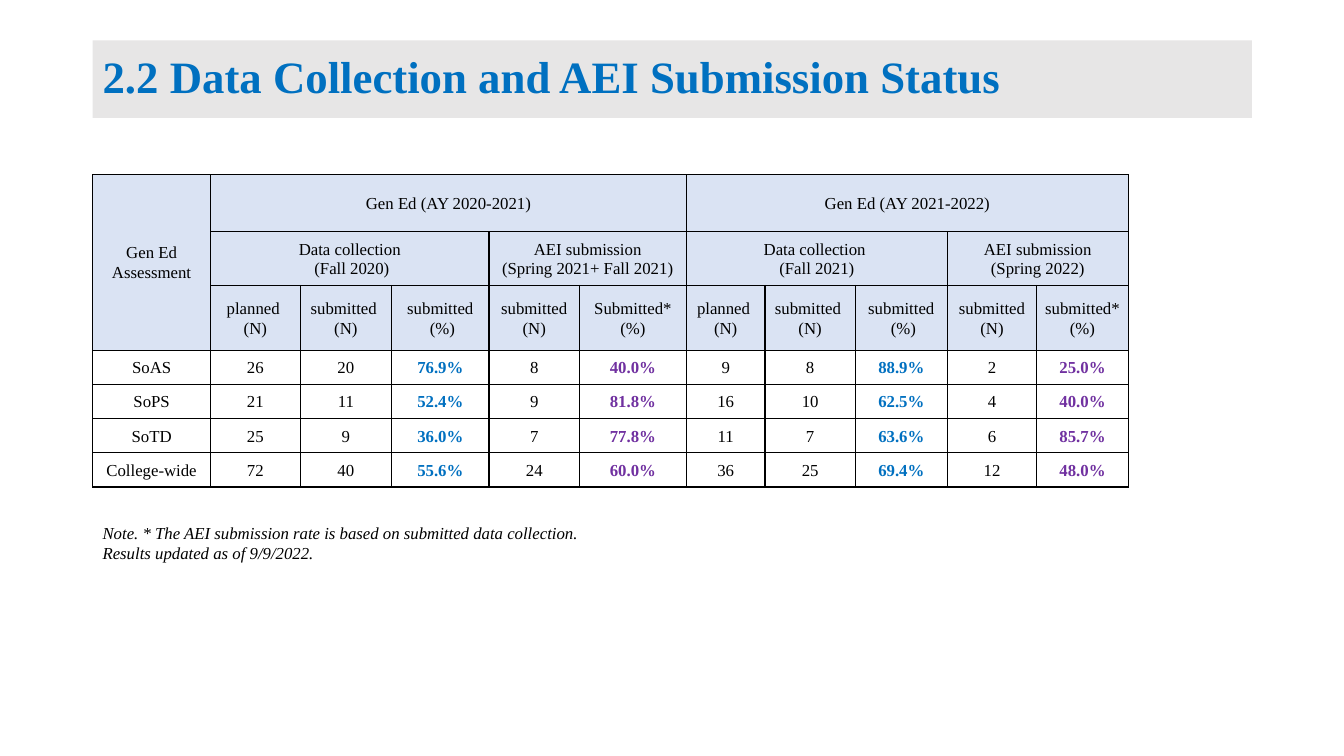
from lxml import etree
from pptx import Presentation
from pptx.dml.color import RGBColor
from pptx.enum.text import MSO_ANCHOR, PP_ALIGN
from pptx.oxml.ns import qn
from pptx.util import Pt

MIDDLE, TOP = MSO_ANCHOR.MIDDLE, MSO_ANCHOR.TOP
LEFT, CENTER = PP_ALIGN.LEFT, PP_ALIGN.CENTER
FONT = "Times New Roman"
BLACK, BLUE, PURPLE = "000000", "0070C0", "7030A0"
TITLE_FILL, HEADER_FILL = "E7E6E6", "DAE3F3"

# Content
TITLE = "2.2 Data Collection and AEI Submission Status"
NOTE = ("Note. * The AEI submission rate is based on submitted data collection.\n"
        "Results updated as of 9/9/2022.")

# Merged header cells: row, column, row span, column span, text
HEADER_GROUPS = [
    (0, 0, 3, 1, "Gen Ed Assessment"),
    (0, 1, 1, 5, "Gen Ed (AY 2020-2021)"),
    (0, 6, 1, 5, "Gen Ed (AY 2021-2022)"),
    (1, 1, 1, 3, "Data collection\n (Fall 2020)"),
    (1, 4, 1, 2, "AEI submission\n(Spring 2021+ Fall 2021)"),
    (1, 6, 1, 3, "Data collection \n(Fall 2021)"),
    (1, 9, 1, 2, "AEI submission\n(Spring 2022)"),
]
YEAR_HEADERS = ["planned \n(N)", "submitted \n(N)", "submitted\n (%)", "submitted\n(N)"]
COLUMN_HEADERS = YEAR_HEADERS + ["Submitted*\n(%)"] + YEAR_HEADERS + ["submitted*\n(%)"]
SCHOOLS = [
    ("SoAS", "26", "20", "76.9%", "8", "40.0%", "9", "8", "88.9%", "2", "25.0%"),
    ("SoPS", "21", "11", "52.4%", "9", "81.8%", "16", "10", "62.5%", "4", "40.0%"),
    ("SoTD", "25", "9", "36.0%", "7", "77.8%", "11", "7", "63.6%", "6", "85.7%"),
    ("College-wide", "72", "40", "55.6%", "24", "60.0%", "36", "25", "69.4%", "12", "48.0%"),
]
RATE_COLORS = {3: BLUE, 8: BLUE, 5: PURPLE, 10: PURPLE}

# Layout in points
MARGIN = 66.2
COLUMN_WIDTHS = [84.3, 63.9, 65.4, 69.6, 64.6, 76.4, 56.1, 64.6, 65.7, 63.9, 65.4]
HEADER_HEIGHTS = [40.8, 38.4, 46.4]
ROW_HEIGHTS = HEADER_HEIGHTS + [24.4] * len(SCHOOLS)


def rgb(color):
    return RGBColor.from_string(color)


def write(frame, text, size=12, color=BLACK, bold=False, italic=False,
          align=LEFT, spacing=1.0):
    frame.word_wrap = True
    for index, line in enumerate(text.split("\n")):
        para = frame.add_paragraph() if index else frame.paragraphs[0]
        para.alignment = align
        para.line_spacing = spacing
        span = para.add_run()
        span.text = line
        font = span.font
        font.name, font.size = FONT, Pt(size)
        font.bold, font.italic = bold, italic
        font.color.rgb = rgb(color)


def add_text(page, text, left, top, width, height, fill=None, anchor=TOP, **style):
    box = page.shapes.add_textbox(Pt(left), Pt(top), Pt(width), Pt(height))
    if fill:
        box.fill.solid()
        box.fill.fore_color.rgb = rgb(fill)
    box.text_frame.vertical_anchor = anchor
    write(box.text_frame, text, **style)


def format_cell(cell, fill=None):
    cell.vertical_anchor = MIDDLE
    cell.margin_left = cell.margin_right = Pt(5)
    cell.margin_top = cell.margin_bottom = 0
    properties = cell._tc.get_or_add_tcPr()
    for side in ("a:lnL", "a:lnR", "a:lnT", "a:lnB"):
        line = etree.SubElement(properties, qn(side), w=str(Pt(1)))
        solid = etree.SubElement(line, qn("a:solidFill"))
        etree.SubElement(solid, qn("a:srgbClr"), val=BLACK)
    if fill:
        cell.fill.solid()
        cell.fill.fore_color.rgb = rgb(fill)
    else:
        cell.fill.background()


def add_status_table(page):
    table = page.shapes.add_table(
        len(ROW_HEIGHTS), len(COLUMN_WIDTHS), Pt(MARGIN), Pt(124.8),
        Pt(sum(COLUMN_WIDTHS)), Pt(sum(ROW_HEIGHTS))).table
    table.first_row = table.horz_banding = False
    for column, width in zip(table.columns, COLUMN_WIDTHS):
        column.width = Pt(width)
    header_count = len(HEADER_HEIGHTS)
    for index, height in enumerate(ROW_HEIGHTS):
        table.rows[index].height = Pt(height)
        for cell in table.rows[index].cells:
            format_cell(cell, HEADER_FILL if index < header_count else None)

    def fill_cell(row, column, text, **style):
        write(table.cell(row, column).text_frame, text,
              align=CENTER, spacing=1.07, **style)

    # Header rows
    for row, column, down, across, text in HEADER_GROUPS:
        table.cell(row, column).merge(table.cell(row + down - 1, column + across - 1))
        fill_cell(row, column, text)
    for column, text in enumerate(COLUMN_HEADERS, 1):
        fill_cell(header_count - 1, column, text)

    # School rows
    for row, values in enumerate(SCHOOLS, header_count):
        for column, text in enumerate(values):
            fill_cell(row, column, text, bold=column in RATE_COLORS,
                      color=RATE_COLORS.get(column, BLACK))


def main():
    deck = Presentation()
    deck.slide_width, deck.slide_height = Pt(960), Pt(540)
    page = deck.slides.add_slide(deck.slide_layouts[6])
    add_text(page, TITLE, MARGIN, 28.8, 828, 55.4, fill=TITLE_FILL, anchor=MIDDLE,
             size=32, color=BLUE, bold=True, spacing=0.9)
    add_status_table(page)
    add_text(page, NOTE, MARGIN, 370, 602.6, 36, italic=True)
    deck.save("out.pptx")


if __name__ == "__main__":
    main()
